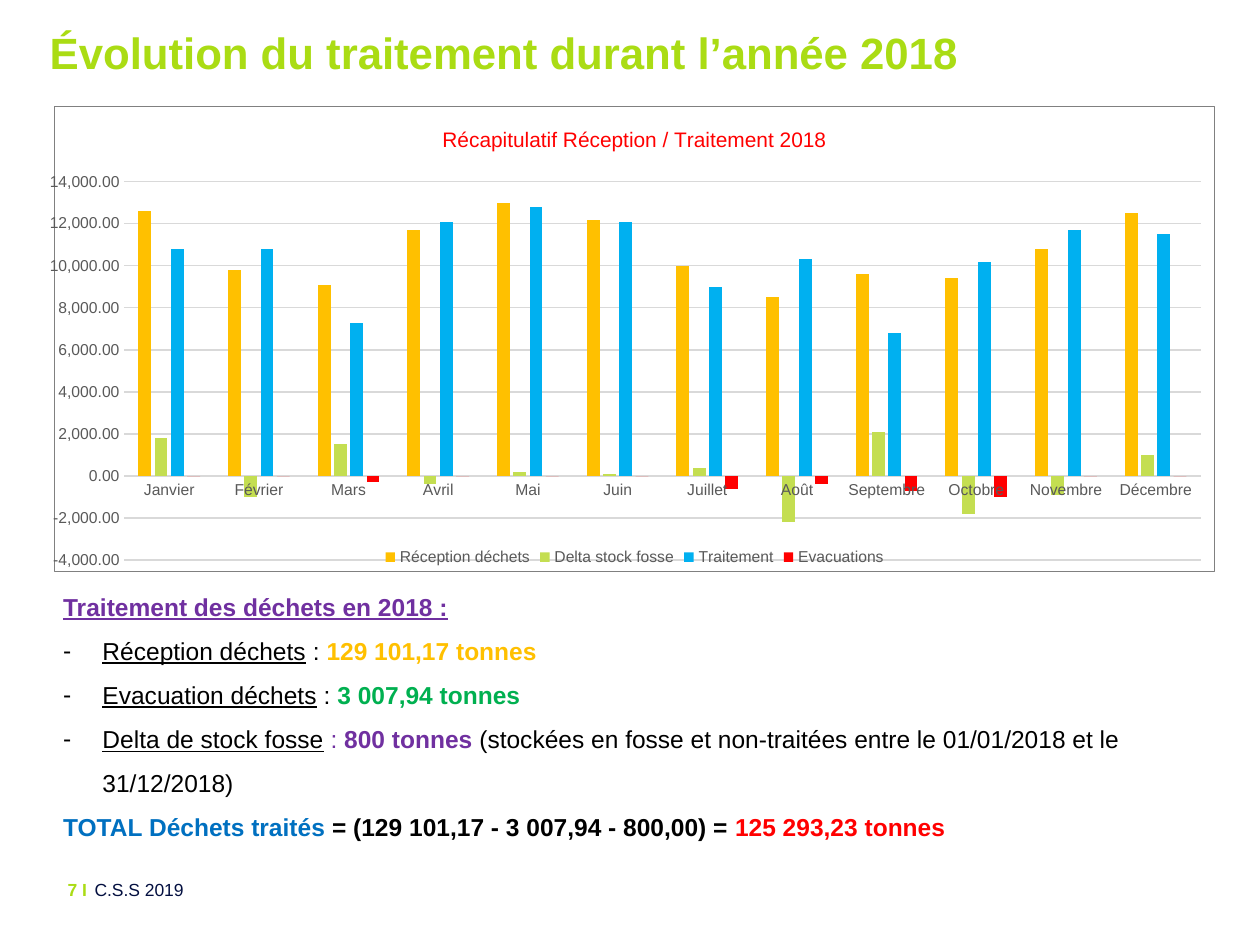
from lxml import etree
from pptx import Presentation
from pptx.chart.data import CategoryChartData
from pptx.dml.color import RGBColor
from pptx.enum import chart as ch, text
from pptx.oxml import parse_xml
from pptx.oxml.ns import nsdecls, qn
from pptx.util import Pt

FONT = "Arial"
COLORS = {
    "lime": "AADC14", "navy": "030F40", "black": "000000", "red": "FF0000",
    "purple": "7030A0", "amber": "FFC000", "green": "00B050", "blue": "0070C0",
    "sky": "00B0F0", "leaf": "C4DE51", "label": "595959", "grid": "D9D9D9",
    "border": "808080",
}
MONTHS = ["Janvier", "Février", "Mars", "Avril", "Mai", "Juin", "Juillet",
          "Août", "Septembre", "Octobre", "Novembre", "Décembre"]
SERIES = [
    ("Réception déchets", "amber",
     [12600, 9800, 9100, 11700, 13000, 12200, 10000, 8500, 9600, 9400, 10800, 12500]),
    ("Delta stock fosse", "leaf",
     [1800, -1000, 1500, -400, 200, 100, 400, -2200, 2100, -1800, -900, 1000]),
    ("Traitement", "sky",
     [10800, 10800, 7300, 12100, 12800, 12100, 9000, 10300, 6800, 10200, 11700, 11500]),
    ("Evacuations", "red", [0, 0, -300, 0, 0, 0, -600, -400, -700, -1000, 0, 0]),
]
# Each run: text, colour, bold, underline
HEADING = [("Traitement des déchets en 2018 :", "purple", True, True)]
ITEMS = [
    [("Réception déchets", "black", False, True), (" : ", "black", False, False),
     ("129 101,17 tonnes", "amber", True, False)],
    [("Evacuation déchets", "black", False, True), (" : ", "black", False, False),
     ("3 007,94 tonnes", "green", True, False)],
    [("Delta de stock fosse", "black", False, True), (" ", "black", False, False),
     (": ", "purple", False, False), ("800 tonnes ", "purple", True, False),
     ("(stockées en fosse et non-traitées entre le 01/01/2018 et le 31/12/2018)",
      "black", False, False)],
]
TOTAL = [("TOTAL Déchets traités ", "blue", True, False),
         ("= (129 101,17 - 3 007,94 - 800,00) = ", "black", True, False),
         ("125 293,23 tonnes", "red", True, False)]


def rgb(name):
    return RGBColor.from_string(COLORS[name])


def style(font, size, color, bold=False, underline=None):
    font.name, font.size, font.bold = FONT, Pt(size), bold
    font.color.rgb = rgb(color)
    font.underline = underline


def text_frame(slide, box, insets=(0, 0, 0, 0)):
    tf = slide.shapes.add_textbox(*map(Pt, box)).text_frame
    tf.word_wrap = True
    tf.margin_left, tf.margin_top, tf.margin_right, tf.margin_bottom = map(Pt, insets)
    return tf


def add_runs(p, runs, size):
    for words, color, bold, underline in runs:
        r = p.add_run()
        r.text = words
        style(r.font, size, color, bold, underline)


def add_dash(p, indent):
    pPr = p._p.get_or_add_pPr()
    pPr.set("marL", str(Pt(indent)))
    pPr.set("indent", str(-Pt(indent)))
    color = etree.SubElement(pPr, qn("a:buClr"))
    etree.SubElement(color, qn("a:srgbClr"), val=COLORS["black"])
    etree.SubElement(pPr, qn("a:buFont"), typeface=FONT)
    etree.SubElement(pPr, qn("a:buChar"), char="-")


def add_title(slide, box):
    p = text_frame(slide, box).paragraphs[0]
    add_runs(p, [("Évolution du traitement durant l’année 2018", "lime", True, False)], 25)


def frame_chart(chart, plot_box):
    """Outline the chart and fix its inner plot area, given as fractions."""
    x, y, w, h = plot_box
    space = chart._chartSpace
    space.find(qn("c:chart")).addnext(parse_xml(
        f'<c:spPr {nsdecls("c", "a")}><a:noFill/><a:ln w="{Pt(0.75)}"><a:solidFill>'
        f'<a:srgbClr val="{COLORS["border"]}"/></a:solidFill></a:ln></c:spPr>'))
    area = space.find(".//" + qn("c:plotArea"))
    for old in area.findall(qn("c:layout")):
        area.remove(old)
    area.insert(0, parse_xml(
        f'<c:layout {nsdecls("c")}><c:manualLayout><c:layoutTarget val="inner"/>'
        f'<c:xMode val="edge"/><c:yMode val="edge"/><c:x val="{x}"/><c:y val="{y}"/>'
        f'<c:w val="{w}"/><c:h val="{h}"/></c:manualLayout></c:layout>'))


def add_waste_chart(slide, box):
    data = CategoryChartData(number_format="#,##0.00")
    data.categories = MONTHS
    for name, _, values in SERIES:
        data.add_series(name, values)
    chart = slide.shapes.add_chart(
        ch.XL_CHART_TYPE.COLUMN_CLUSTERED, *map(Pt, box), data).chart
    style(chart.font, 10, "black")

    # Title and legend
    chart.has_title = True
    p = chart.chart_title.text_frame.paragraphs[0]
    add_runs(p, [("Récapitulatif Réception / Traitement 2018", "red", False, None)], 12)
    chart.has_legend = True
    chart.legend.position = ch.XL_LEGEND_POSITION.BOTTOM
    chart.legend.include_in_layout = False
    style(chart.legend.font, 9, "label")

    # Axes
    cat, val = chart.category_axis, chart.value_axis
    for axis in (cat, val):
        axis.major_tick_mark = axis.minor_tick_mark = ch.XL_TICK_MARK.NONE
        style(axis.tick_labels.font, 9, "label")
    val.minimum_scale, val.maximum_scale, val.major_unit = -4000, 14000, 2000
    val.tick_labels.number_format = "#,##0.00"
    val.tick_labels.number_format_is_linked = False
    val.format.line.fill.background()
    for line in (cat.format.line, val.major_gridlines.format.line):
        line.color.rgb, line.width = rgb("grid"), Pt(0.75)

    # Columns
    plot = chart.plots[0]
    plot.gap_width, plot.overlap, plot.vary_by_categories = 219, -27, False
    for series, (_, color, _) in zip(plot.series, SERIES):
        series.invert_if_negative = False
        series.format.fill.solid()
        series.format.fill.fore_color.rgb = rgb(color)
    frame_chart(chart, (0.06, 0.162, 0.928, 0.814))


def add_summary(slide, box):
    tf = text_frame(slide, box, (7.2, 3.6, 7.2, 3.6))
    for i, runs in enumerate([HEADING, *ITEMS, TOTAL]):
        p = tf.add_paragraph() if i else tf.paragraphs[0]
        if runs in ITEMS:
            add_dash(p, 22.5)
        p.line_spacing = 1.5
        add_runs(p, runs, 14)


def add_footer(slide, box):
    x, y, w, h = box
    number_w = 54
    p = text_frame(slide, (x, y, number_w, h), (0, 0, 4.25, 0)).paragraphs[0]
    p.alignment = text.PP_ALIGN.RIGHT
    add_runs(p, [("7 I", "lime", True, False)], 10)
    p = text_frame(slide, (x + number_w, y, w - number_w, h)).paragraphs[0]
    add_runs(p, [("C.S.S 2019", "navy", False, False)], 10)


def main():
    prs = Presentation()
    prs.slide_width, prs.slide_height = Pt(720), Pt(540)
    slide = prs.slides.add_slide(prs.slide_layouts[6])
    add_title(slide, (28.4, 15, 666, 28))
    add_footer(slide, (0, 502.5, 581, 36.7))
    add_waste_chart(slide, (28.4, 60.5, 666, 266.4))
    add_summary(slide, (29, 326.2, 665, 158.4))
    prs.save("out.pptx")


if __name__ == "__main__":
    main()
